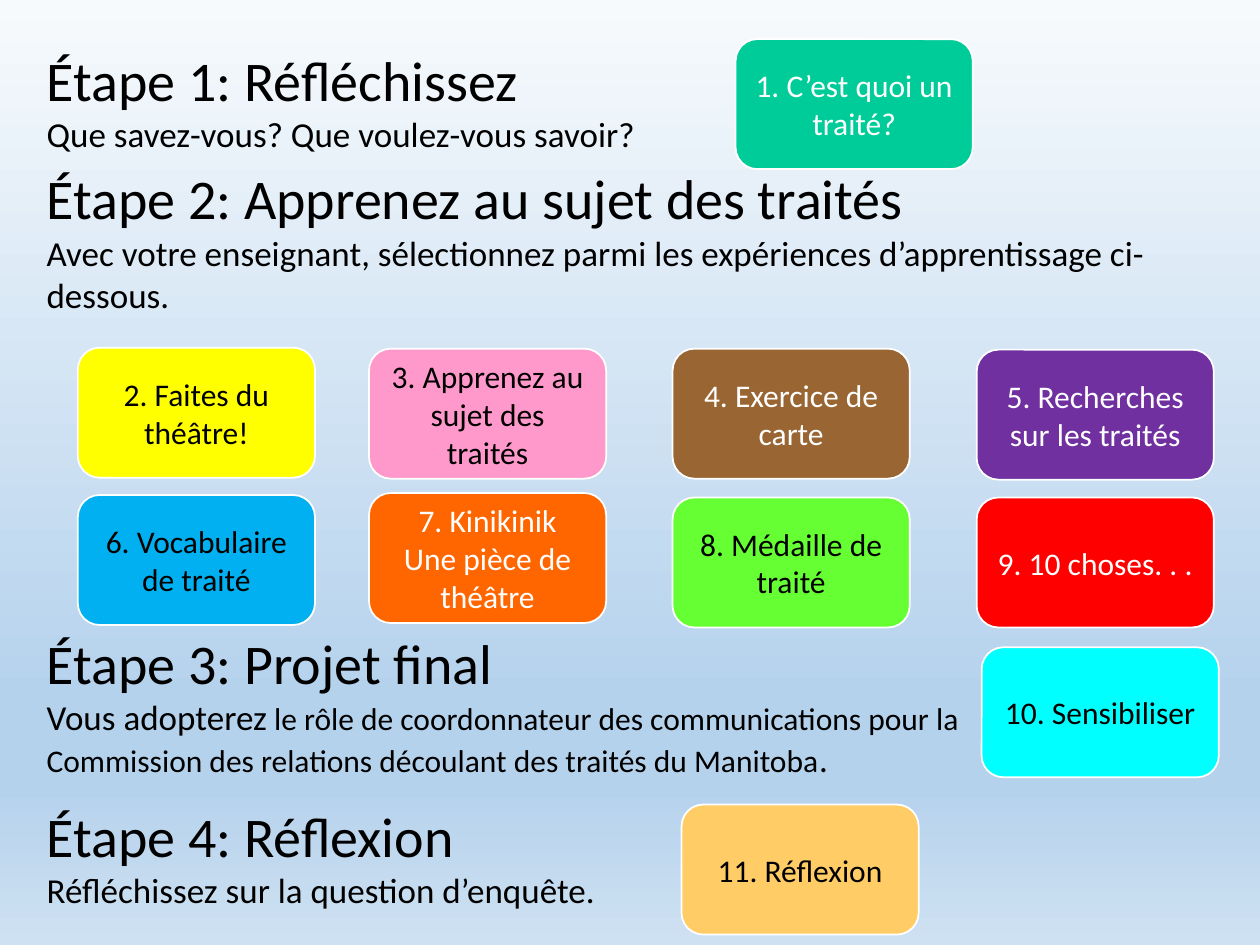
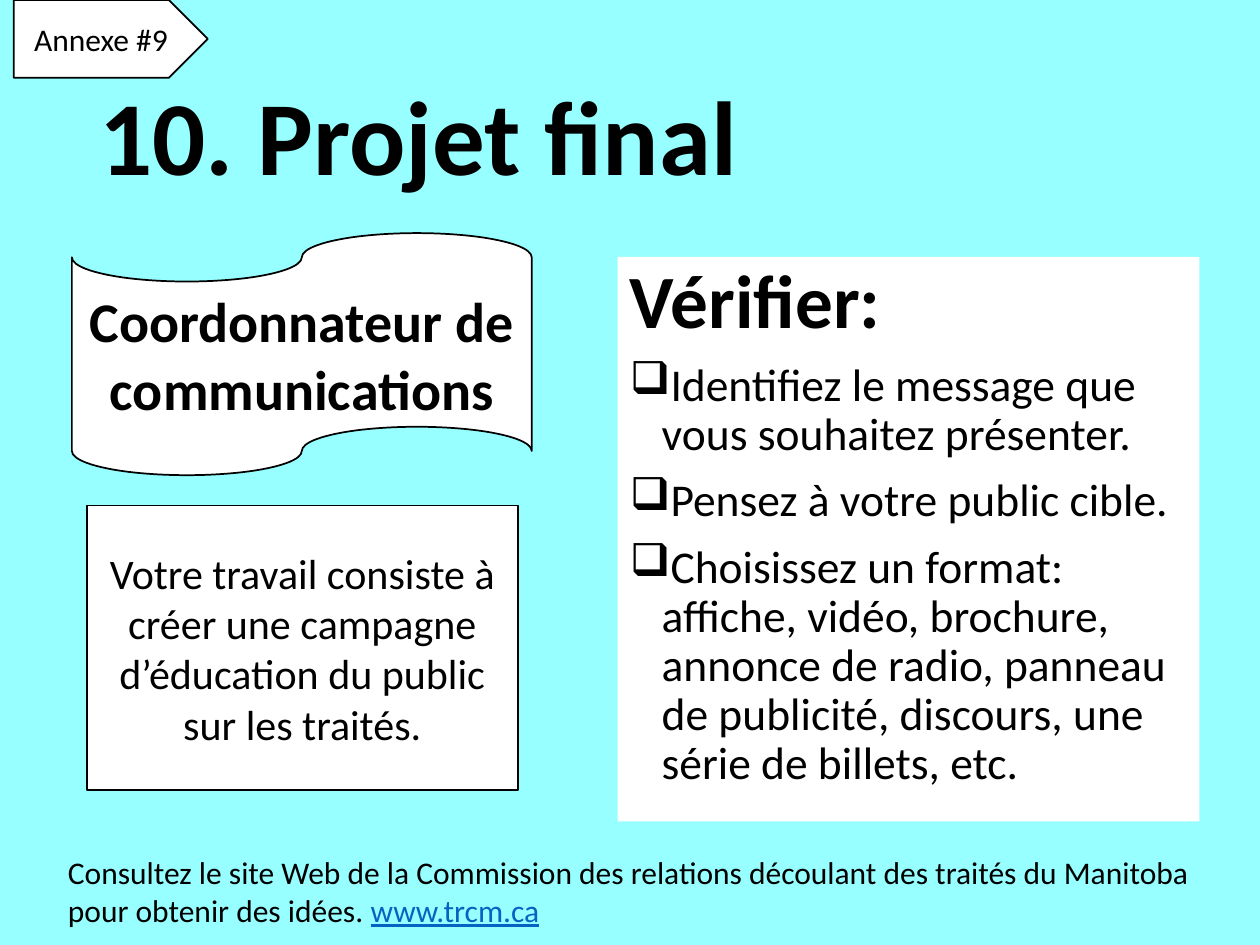
"""Build two slides on treaties: the learning steps and the final project."""
from copy import deepcopy

from lxml import etree
from pptx import Presentation
from pptx.dml.color import RGBColor
from pptx.enum.shapes import MSO_SHAPE
from pptx.enum.text import MSO_ANCHOR, PP_ALIGN
from pptx.oxml.ns import qn
from pptx.util import Cm, Pt

ROUND, RECT = MSO_SHAPE.ROUNDED_RECTANGLE, MSO_SHAPE.RECTANGLE
TAPE, TAG = MSO_SHAPE.FLOWCHART_PUNCHED_TAPE, MSO_SHAPE.PENTAGON
MIDDLE, TOP = MSO_ANCHOR.MIDDLE, MSO_ANCHOR.TOP
LEFT, CENTER = PP_ALIGN.LEFT, PP_ALIGN.CENTER
FONT, BLACK, WHITE, BLUE = "Calibri", "000000", "FFFFFF", "0563C1"
CARD_W, CARD_H = 4.78, 2.62


def write(frame, rows, align=LEFT, anchor=TOP, ink=BLACK, bold=False):
    """Fill a frame with one paragraph for each (text, size) row."""
    frame.word_wrap = True
    frame.vertical_anchor = anchor
    for i, (text, size) in enumerate(rows):
        para = frame.add_paragraph() if i else frame.paragraphs[0]
        para.text = text
        para.alignment = align
        para.font.name = FONT
        para.font.size = Pt(size)
        para.font.bold = bold
        para.font.color.rgb = RGBColor.from_string(ink)
    return frame.paragraphs


def block(slide, kind, place, fill, line=None):
    """Add a filled shape and return its text frame."""
    shape = slide.shapes.add_shape(kind, *map(Cm, place))
    shape.shadow.inherit = False
    shape.fill.solid()
    shape.fill.fore_color.rgb = RGBColor.from_string(fill)
    if line:
        shape.line.color.rgb = RGBColor.from_string(line)
        shape.line.width = Pt(1)
    else:
        shape.line.fill.background()
    return shape.text_frame


deck = Presentation()
deck.slide_width, deck.slide_height = Cm(25.4), Cm(19.05)

steps = deck.slides.add_slide(deck.slide_layouts[6])
back = steps.background.fill
back.gradient()
back.gradient_angle = 270
stops = steps.element.find(".//" + qn("a:gsLst"))
for stop in list(stops):
    stops.append(deepcopy(stop))
shades = [(0, "F7FAFD"), (0.74, "B5D2EC"), (0.83, "B5D2EC"), (1, "CEE1F2")]
for stop, (spot, shade) in zip(back.gradient_stops, shades):
    stop.position = spot
    stop.color.rgb = RGBColor.from_string(shade)

stages = [
    (0.79, 16.13, 2.49, "Étape 1: Réfléchissez", "Que savez-vous? Que voulez-vous savoir?"),
    (3.18, 24.05, 3.33, "Étape 2: Apprenez au sujet des traités",
     "Avec votre enseignant, sélectionnez parmi les expériences d’apprentissage ci-dessous."),
    (12.55, 19.41, 3.33, "Étape 3: Projet final", "Vous adopterez"),
    (16.03, 18.11, 2.49, "Étape 4: Réflexion", "Réfléchissez sur la question d’enquête."),
]
for top, wide, high, head, note in stages:
    area = steps.shapes.add_textbox(Cm(0.69), Cm(top), Cm(wide), Cm(high))
    paras = write(area.text_frame, [(head, 32), (note, 20)])
    if "Étape 3" in head:
        role = paras[1].add_run()
        role.text = (" le rôle de coordonnateur des communications pour la "
                     "Commission des relations découlant des traités du Manitoba")
        role.font.size = Pt(18)
        paras[1].add_run().text = "."

cards = [
    (14.83, 0.79, "00CC99", WHITE, "1. C’est quoi un traité?"),
    (1.57, 7.01, "FFFF00", BLACK, "2. Faites du théâtre!"),
    (7.44, 7.03, "FF99CC", BLACK, "3. Apprenez au sujet des traités"),
    (13.56, 7.03, "996633", WHITE, "4. Exercice de carte"),
    (19.69, 7.05, "7030A0", WHITE, "5. Recherches sur les traités"),
    (1.57, 9.98, "00B0F0", BLACK, "6. Vocabulaire de traité"),
    (7.44, 9.94, "FF6600", WHITE, "7. Kinikinik\vUne pièce de théâtre"),
    (13.56, 10.03, "66FF33", BLACK, "8. Médaille de traité"),
    (19.69, 10.03, "FF0000", WHITE, "9. 10 choses. . ."),
    (19.79, 13.05, "00FFFF", BLACK, "10. Sensibiliser"),
    (13.74, 16.22, "FFCC66", BLACK, "11. Réflexion"),
]
for left, top, fill, ink, text in cards:
    frame = block(steps, ROUND, (left, top, CARD_W, CARD_H), fill, WHITE)
    write(frame, [(text, 18)], CENTER, MIDDLE, ink)

final = deck.slides.add_slide(deck.slide_layouts[5])
final.background.fill.solid()
final.background.fill.fore_color.rgb = RGBColor.from_string("97FFFF")
title = final.shapes.title
title.left, title.top, title.width, title.height = map(Cm, (1.75, 1.02, 21.9, 3.68))
write(title.text_frame, [("10. Projet final", 60)], LEFT, MIDDLE, bold=True)[0].line_spacing = 0.9

checks = [
    ("Vérifier:", 43),
    ("Identifiez le message que vous souhaitez présenter.", 26),
    ("Pensez à votre public cible.", 26),
    ("Choisissez un format: affiche, vidéo, brochure, annonce de radio, "
     "panneau de publicité, discours, une série de billets, etc.", 26),
]
paras = write(block(final, RECT, (12.45, 5.18, 11.73, 11.38), WHITE), checks)
paras[0].font.bold = True
for i, para in enumerate(paras):
    para.line_spacing = 0.9
    para.space_before = Pt(10)
    if i:
        props = para.font._element.getparent() if hasattr(para.font, "_element") else para._p.pPr
        props.set("marL", str(Cm(0.64)))
        props.set("indent", str(-Cm(0.64)))
        mark = etree.Element(qn("a:buChar"), char="❑")
        props.find(qn("a:defRPr")).addprevious(mark)

panels = [
    (TAPE, (1.45, 4.7, 9.27, 4.88), "Coordonnateur de communications", 32, True),
    (RECT, (1.75, 10.19, 8.69, 5.74),
     "Votre travail consiste à créer une campagne d’éducation du public sur les traités.", 24, False),
    (TAG, (0.28, 0, 3.91, 1.57), "Annexe #9", 18, False),
]
for kind, place, text, size, bold in panels:
    frame = block(final, kind, place, WHITE, BLACK)
    write(frame, [(text, size)], CENTER, MIDDLE, bold=bold)

foot = final.shapes.add_textbox(Cm(1.12), Cm(17.07), Cm(23.8), Cm(1.8))
hint = ("Consultez le site Web de la Commission des relations découlant "
        "des traités du Manitoba pour obtenir des idées. ")
site = write(foot.text_frame, [(hint, 18)])[0].add_run()
site.text = "www.trcm.ca"
site.font.underline = True
site.font.color.rgb = RGBColor.from_string(BLUE)

deck.save("out.pptx")
